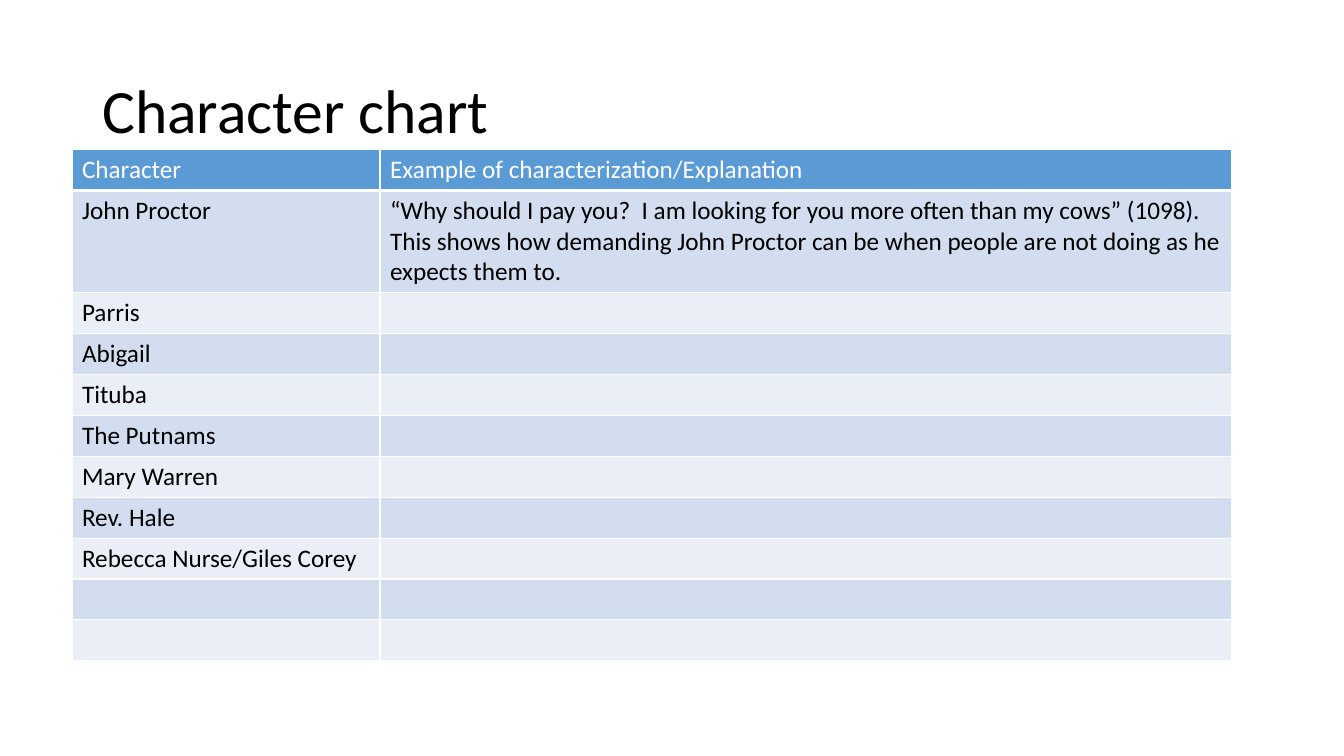
"""Build the character chart slide."""
import pptx
import pptx.dml.color
import pptx.enum.text
import pptx.oxml
import pptx.oxml.ns
import pptx.util

Pt = pptx.util.Pt
TITLE = "Character chart"
ROWS = [
    ("Character", "Example of characterization/Explanation"),
    ("John Proctor", "“Why should I pay you?  I am looking for you more often than my cows” (1098). "
     "This shows how demanding John Proctor can be when people are not doing as he expects them to."),
    ("Parris", ""),
    ("Abigail", ""),
    ("Tituba", ""),
    ("The Putnams", ""),
    ("Mary Warren", ""),
    ("Rev. Hale", ""),
    ("Rebecca Nurse/Giles Corey", ""),
    ("", ""),
    ("", ""),
]
COLORS = {"black": "000000", "white": "FFFFFF", "header": "5B9BD5", "odd": "D2DEEF", "even": "EAEFF7"}
TITLE_FONT = {"name": "Calibri", "size": Pt(44), "bold": False}
CELL_FONT = {"name": "Calibri", "size": Pt(18), "bold": False}
TITLE_BOX = (66, 28.8, 828, 104.4)
TABLE_LEFT, TABLE_TOP = 51.4, 106.8
COL_WIDTHS = (220, 608)
ROW_HEIGHT, QUOTE_HEIGHT = 29.2, 73.2


def rgb(name):
    """Return the named colour."""
    return pptx.dml.color.RGBColor.from_string(COLORS[name])


def style_font(font, formats, color):
    """Apply the format values and colour to a font."""
    for key, value in formats.items():
        setattr(font, key, value)
    font.color.rgb = rgb(color)


def add_borders(cell, bottom):
    """Draw white borders round a cell."""
    props = cell._tc.get_or_add_tcPr()
    widths = {"lnL": 1, "lnR": 1, "lnT": 1, "lnB": bottom}
    for i, (tag, width) in enumerate(widths.items()):
        props.insert(i, pptx.oxml.parse_xml(
            f'<a:{tag} {pptx.oxml.ns.nsdecls("a")} w="{Pt(width)}"><a:solidFill>'
            f'<a:srgbClr val="{COLORS["white"]}"/></a:solidFill></a:{tag}>'))


def add_title(s):
    """Add the slide title."""
    tf = s.shapes.add_textbox(*map(Pt, TITLE_BOX)).text_frame
    tf.word_wrap = True
    tf.vertical_anchor = pptx.enum.text.MSO_ANCHOR.MIDDLE
    p = tf.paragraphs[0]
    p.line_spacing = 0.9
    r = p.add_run()
    r.text = TITLE
    style_font(r.font, TITLE_FONT, "black")


def add_character_table(s):
    """Add the banded table of characters."""
    heights = [QUOTE_HEIGHT if quote and i else ROW_HEIGHT for i, (_, quote) in enumerate(ROWS)]
    box = (TABLE_LEFT, TABLE_TOP, sum(COL_WIDTHS), sum(heights))
    table = s.shapes.add_table(len(ROWS), len(COL_WIDTHS), *map(Pt, box)).table
    for column, width in zip(table.columns, COL_WIDTHS):
        column.width = Pt(width)
    for i, (texts, height) in enumerate(zip(ROWS, heights)):
        table.rows[i].height = Pt(height)
        fill = "header" if i == 0 else ("even", "odd")[i % 2]
        for j, text in enumerate(texts):
            cell = table.cell(i, j)
            cell.fill.solid()
            cell.fill.fore_color.rgb = rgb(fill)
            add_borders(cell, 1 if i else 3)
            p = cell.text_frame.paragraphs[0]
            if text:
                r = p.add_run()
                r.text = text
                style_font(r.font, CELL_FONT, "black" if i else "white")


def main():
    """Build and save the slide."""
    prs = pptx.Presentation()
    prs.slide_width, prs.slide_height = Pt(960), Pt(540)
    s = prs.slides.add_slide(prs.slide_layouts[6])
    add_title(s)
    add_character_table(s)
    prs.save("out.pptx")


if __name__ == "__main__":
    main()
